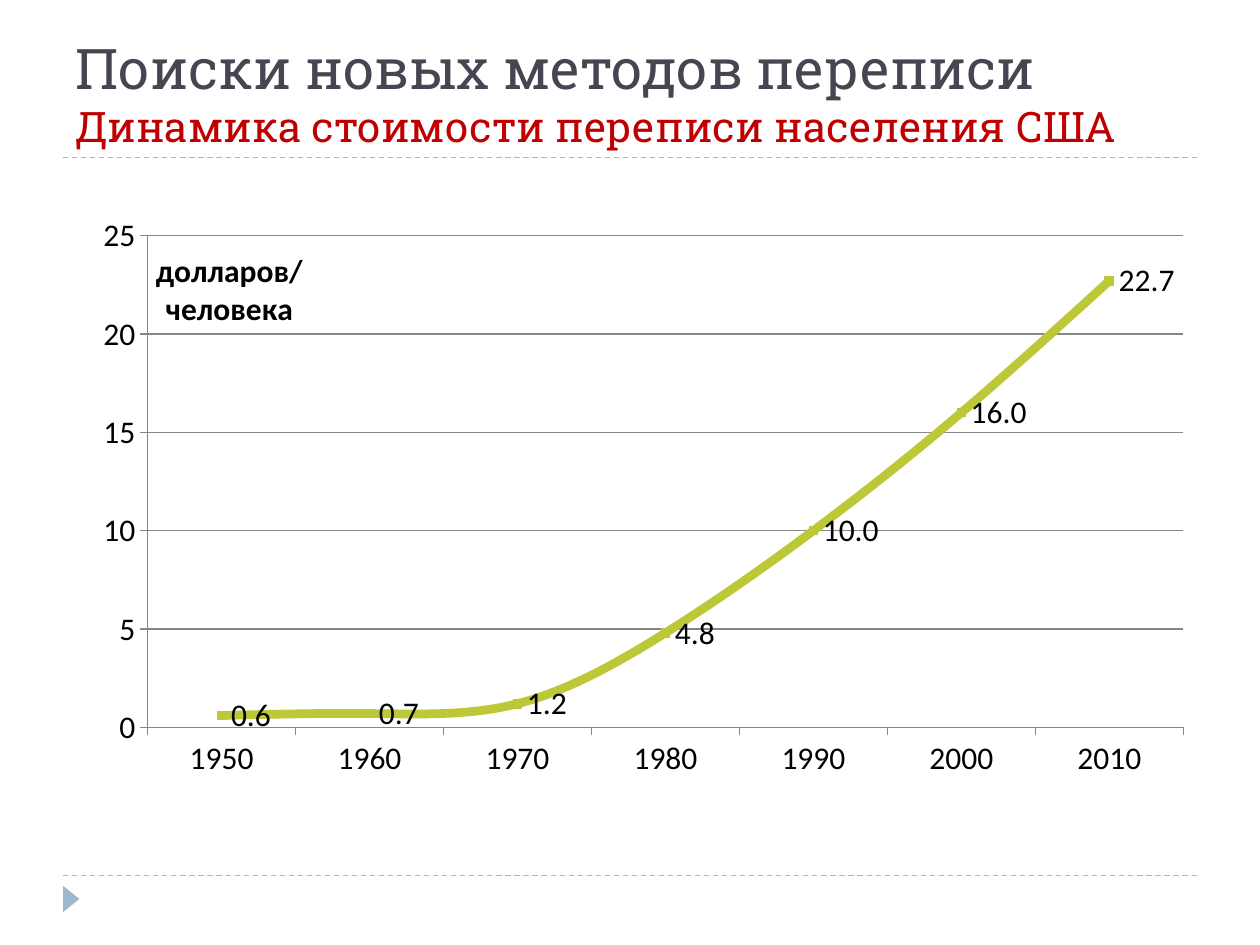
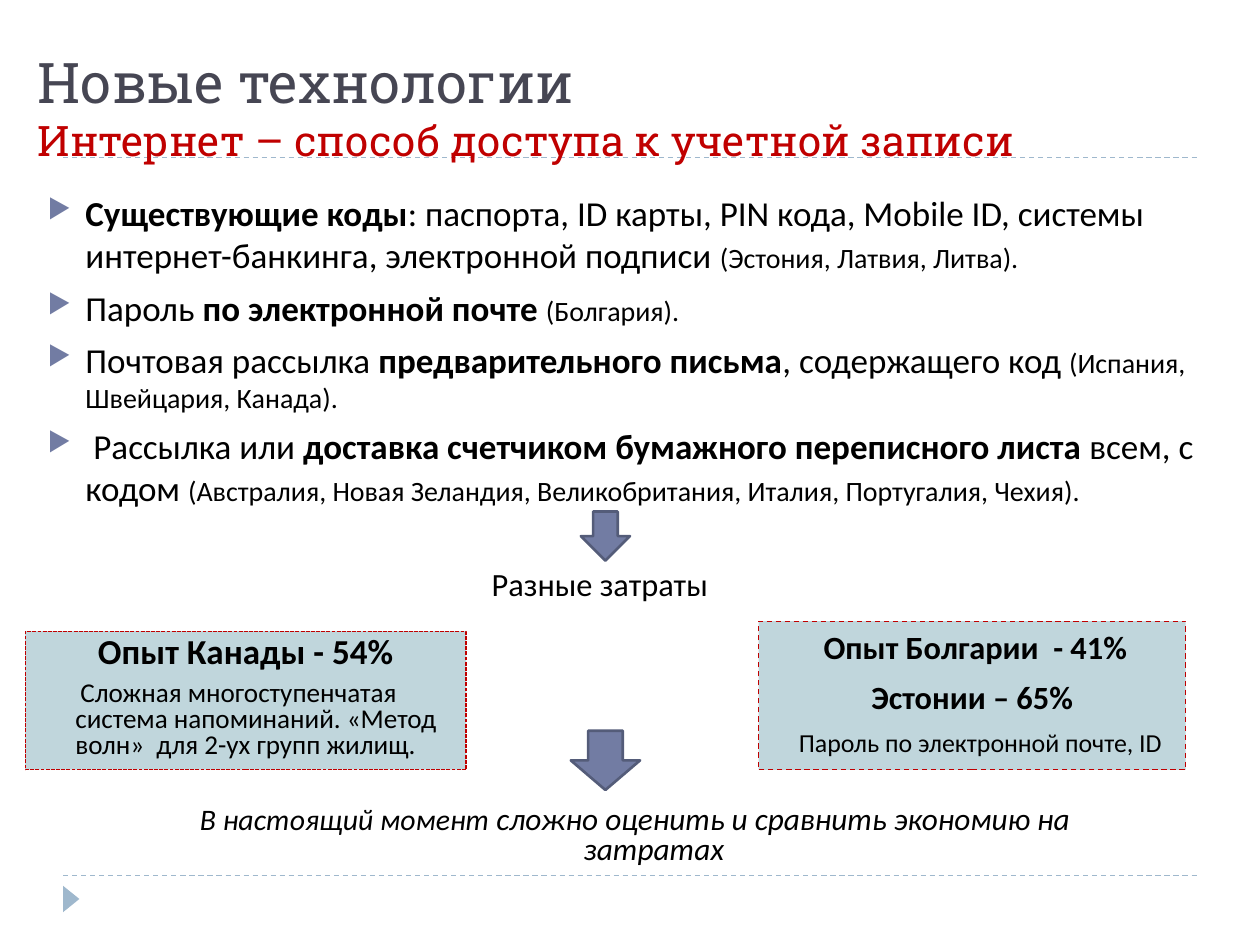
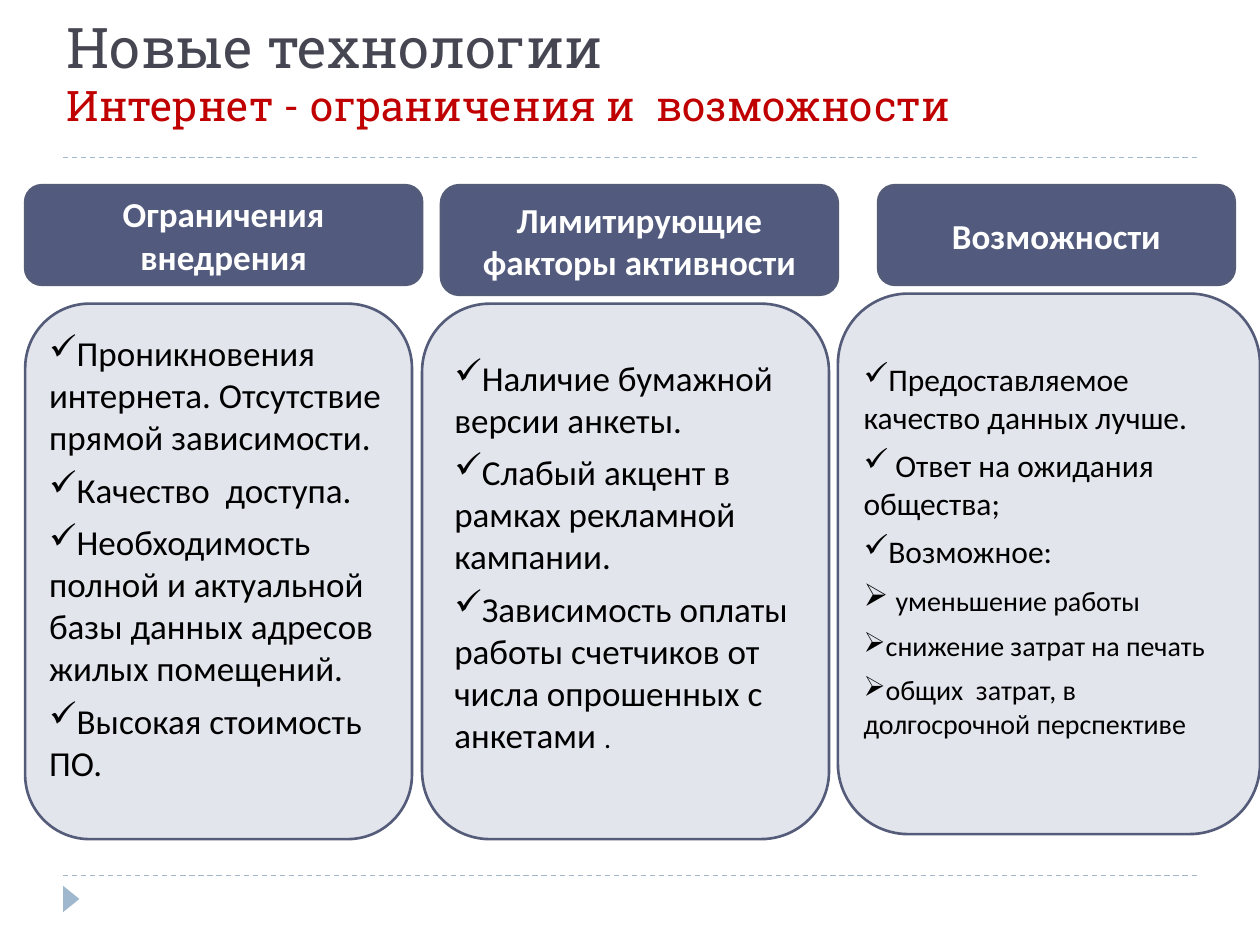
"""Builds three slides on new census methods: costs, internet access and its limits."""
from lxml import etree
from pptx import Presentation
from pptx.chart.data import CategoryChartData
from pptx.dml.color import RGBColor
from pptx.enum.chart import XL_CHART_TYPE, XL_LABEL_POSITION, XL_MARKER_STYLE
from pptx.enum.dml import MSO_LINE
from pptx.enum.shapes import MSO_CONNECTOR, MSO_SHAPE
from pptx.enum.text import MSO_ANCHOR, MSO_AUTO_SIZE, PP_ALIGN
from pptx.oxml import parse_xml
from pptx.oxml.ns import qn
from pptx.util import Inches, Pt

LEFT, CENTER = PP_ALIGN.LEFT, PP_ALIGN.CENTER
TOP, MIDDLE, BOTTOM = MSO_ANCHOR.TOP, MSO_ANCHOR.MIDDLE, MSO_ANCHOR.BOTTOM
RECTANGLE, ROUNDED = MSO_SHAPE.RECTANGLE, MSO_SHAPE.ROUNDED_RECTANGLE
ARROW, TRIANGLE = MSO_SHAPE.DOWN_ARROW, MSO_SHAPE.ISOSCELES_TRIANGLE
DASH, SHORT_DASH = MSO_LINE.DASH, MSO_LINE.SQUARE_DOT
BODY_FONT, TITLE_FONT = "Calibri", "Roboto Slab"
COLORS = {name: RGBColor.from_string(code) for name, code in {
    "title": "464653", "accent": "C00000", "rule": "9FB8CD", "text": "000000",
    "white": "FFFFFF", "arrow": "727CA3", "outline": "545C79", "header": "525B7E",
    "panel": "E3E5ED", "note": "C0D6DC", "curve": "BCC838", "grid": "868686",
}.items()}
WIDTH, HEIGHT = 10, 7.5
EDGE = WIDTH * 0.05
HANG = 0.3


def add_box(page, frame, kind=None, fill=None, line=None, weight=1.5, dash=None, anchor=TOP):
    """Add a text box, or a preset shape when a kind is given."""
    sides = [Inches(side) for side in frame]
    box = page.shapes.add_shape(kind, *sides) if kind else page.shapes.add_textbox(*sides)
    if kind:
        box.shadow.inherit = False
        box.fill.solid()
        box.fill.fore_color.rgb = COLORS[fill]
        if line:
            box.line.color.rgb = COLORS[line]
            box.line.width = Pt(weight)
            box.line.dash_style = dash
        else:
            box.line.fill.background()
    box.text_frame.word_wrap = True
    box.text_frame.vertical_anchor = anchor
    return box


def add_paragraph(box, spans, size, align=LEFT, color="text", bold=None, italic=None, bullet=None,
                  bullet_color=None, left=0, indent=0, before=6, after=0, spacing=None):
    """Write one paragraph of (text, size, bold) spans into a box."""
    frame = box.text_frame
    para = frame.paragraphs[0] if not frame.text else frame.add_paragraph()
    para.alignment = align
    para.space_before, para.space_after = Pt(before), Pt(after)
    if spacing:
        para.line_spacing = spacing
    properties = para._p.get_or_add_pPr()
    properties.set("marL", str(Inches(left)))
    properties.set("indent", str(Inches(indent)))
    if bullet_color:
        tint = etree.SubElement(properties, qn("a:buClr"))
        etree.SubElement(tint, qn("a:srgbClr"), val=str(COLORS[bullet_color]))
        etree.SubElement(properties, qn("a:buSzPct"), val="76000")
    if bullet:
        etree.SubElement(properties, qn("a:buChar"), char=bullet)
    para.font.name, para.font.size = BODY_FONT, Pt(size)
    para.font.bold, para.font.italic = bold, italic
    para.font.color.rgb = COLORS[color]
    for text, span_size, span_bold in [(spans, None, None)] if isinstance(spans, str) else spans:
        span = para.add_run()
        span.text = text
        span.font.bold = span_bold
        if span_size:
            span.font.size = Pt(span_size)


deck = Presentation()
deck.slide_width, deck.slide_height = Inches(WIDTH), Inches(HEIGHT)
layout = deck.slide_layouts[5]

titles = [
    ("Поиски новых методов переписи", "Динамика стоимости переписи населения США",
     (EDGE, 0.17, 9, 1.08)),
    ("Новые технологии", "Интернет – способ доступа к учетной записи", (0.2, 0, 9.45, 1.36)),
    ("Новые технологии", "Интернет - ограничения и  возможности", (0.43, 0, 9, 1.08)),
]
pages = []
for heading, subheading, frame in titles:
    page = deck.slides.add_slide(layout)
    pages.append(page)
    title = page.shapes.title
    title.left, title.top, title.width, title.height = [Inches(side) for side in frame]
    title.text_frame.auto_size = MSO_AUTO_SIZE.NONE
    title.text_frame.vertical_anchor = BOTTOM
    para = title.text_frame.paragraphs[0]
    para.alignment = LEFT
    para.font.name = TITLE_FONT
    for text, size, color in [(heading, 32, "title"), (subheading, 24, "accent")]:
        if para.runs:
            para.add_line_break()
        span = para.add_run()
        span.text = text
        span.font.size = Pt(size)
        span.font.color.rgb = COLORS[color]
cost_page, access_page, limits_page = pages

decor = [add_box(cost_page, (0.46, 7.07, 0.21, 0.13), TRIANGLE, "rule")]
decor[0].rotation = 90
for level in (1.25, 6.95):
    rule = cost_page.shapes.add_connector(MSO_CONNECTOR.STRAIGHT, Inches(EDGE), Inches(level),
                                          Inches(WIDTH - EDGE), Inches(level))
    rule.line.color.rgb = COLORS["rule"]
    rule.line.width = Pt(0.75)
    rule.line.dash_style = DASH
    etree.SubElement(rule.element.spPr, qn("a:effectLst"))
    decor.append(rule)
for number, part in enumerate(decor, 20):
    part.element.xpath(".//p:cNvPr")[0].set("id", str(number))
    layout.shapes.element.append(part.element)

costs = {"1950": 0.6, "1960": 0.7, "1970": 1.2, "1980": 4.8, "1990": 10, "2000": 16, "2010": 22.7}
data = CategoryChartData()
data.categories = list(costs)
data.add_series("Series 1", list(costs.values()))
chart = cost_page.shapes.add_chart(XL_CHART_TYPE.LINE_MARKERS, Inches(0.59), Inches(1.62),
                                   Inches(8.82), Inches(4.72), data).chart
chart.has_legend = chart.has_title = False
chart.font.name, chart.font.size = BODY_FONT, Pt(18)
chart.font.color.rgb = COLORS["text"]

values = chart.value_axis
values.minimum_scale, values.maximum_scale, values.major_unit = 0, 25, 5
values.tick_labels.number_format = "0"
values.tick_labels.number_format_is_linked = False
for line in (values.format.line, values.major_gridlines.format.line,
             chart.category_axis.format.line):
    line.color.rgb = COLORS["grid"]
    line.width = Pt(0.75)

caption = values.axis_title.text_frame
caption.text = "долларов/\nчеловека"
caption._txBody.bodyPr.set("rot", "0")
caption._txBody.bodyPr.set("vert", "horz")
for para in caption.paragraphs:
    para.font.name, para.font.size, para.font.bold = BODY_FONT, Pt(18), True

plot_area = chart.element.find(".//" + qn("c:plotArea"))
axis_title = values.axis_title._element
for owner, place in [(plot_area, {"x": 0.066, "y": 0.053, "w": 0.932, "h": 0.827}),
                     (axis_title, {"x": 0.07, "y": 0.07})]:
    for old in owner.findall(qn("c:layout")):
        owner.remove(old)
    target = '<c:layoutTarget val="inner"/>' if owner is plot_area else ""
    modes = "".join(f'<c:{key}Mode val="edge"/>' for key in "xy")
    sizes = "".join(f'<c:{key} val="{share}"/>' for key, share in place.items())
    manual = parse_xml(
        '<c:layout xmlns:c="http://schemas.openxmlformats.org/drawingml/2006/chart">'
        f"<c:manualLayout>{target}{modes}{sizes}</c:manualLayout></c:layout>")
    owner.insert(0 if owner is plot_area else 1, manual)
overlay = axis_title.find(qn("c:overlay"))
if overlay is not None:
    overlay.set("val", "1")

curve = chart.plots[0].series[0]
curve.smooth = True
curve.format.line.color.rgb = COLORS["curve"]
curve.format.line.width = Pt(5)
curve.marker.style, curve.marker.size = XL_MARKER_STYLE.SQUARE, 5
curve.marker.format.fill.solid()
curve.marker.format.fill.fore_color.rgb = COLORS["curve"]
curve.marker.format.line.color.rgb = COLORS["curve"]
labels = curve.data_labels
labels.show_value = True
labels.number_format, labels.number_format_is_linked = "#,##0.0", False
labels.position = XL_LABEL_POSITION.RIGHT

access_ways = [
    [("Существующие коды", None, True),
     (": паспорта, ID карты, PIN кода, Mobile ID, системы интернет-банкинга, "
      "электронной подписи ", None, None), ("(Эстония, Латвия, Литва).", 16, None)],
    [("Пароль ", None, None), ("по электронной почте ", None, True), ("(Болгария).", 16, None)],
    [("Почтовая рассылка ", None, None), ("предварительного письма", None, True),
     (", содержащего код ", None, None), ("(Испания, Швейцария, Канада).", 16, None)],
    [(" Рассылка или ", None, None),
     ("доставка счетчиком бумажного переписного листа ", None, True),
     ("всем, с кодом ", None, None),
     ("(Австралия, Новая Зеландия, Великобритания, Италия, Португалия, Чехия).", 16, None)],
]
ways_box = add_box(access_page, (0.28, 1.47, 9.45, 2.68))
for spans in access_ways:
    add_paragraph(ways_box, spans, 20, bullet="▶", bullet_color="arrow", left=HANG, indent=-HANG)

for frame in [(4.61, 4.06, 0.39, 0.39), (4.53, 5.8, 0.55, 0.47)]:
    add_box(access_page, frame, ARROW, "arrow", "outline")

spending = add_box(access_page, (2.4, 4.46, 4.72, 0.39))
add_paragraph(spending, "Разные затраты", 18.5, CENTER, spacing=0.9)

canada = add_box(access_page, (0.2, 5.01, 3.5, 1.1), RECTANGLE, "note", "accent", 0.75, SHORT_DASH)
add_paragraph(canada, "Опыт Канады - 54%", 20, CENTER, bold=True, spacing=0.8)
add_paragraph(canada, "Сложная многоступенчатая система напоминаний. «Метод волн»  для 2-ух "
              "групп жилищ.", 15.5, left=HANG, indent=0.04, spacing=0.8)

bulgaria = add_box(access_page, (6.02, 4.93, 3.39, 1.18), RECTANGLE, "note", "accent", 0.75, DASH)
for text, size, bold, shift in [("Опыт Болгарии  - 41%", 18.5, True, 0.05),
                                ("Эстонии – 65%", 18.5, True, 0),
                                ("Пароль по электронной почте, ID", 14.8, None, 0.13)]:
    add_paragraph(bulgaria, text, size, CENTER, bold=bold, left=shift)

summary = add_box(access_page, (1.38, 6.35, 7.32, 0.6))
add_paragraph(summary, [("В настоящий момент ", 17, None),
                        ("сложно оценить и сравнить экономию на затратах", None, None)],
              17.9, CENTER, italic=True, left=HANG, indent=-HANG, spacing=0.8)

CHECK, POINTER = "✓", "➢"
columns = [
    ("Ограничения внедрения", (0.2, 1.47, 3.15, 0.79), (0.2, 2.41, 3.07, 4.25), 0.04, 0.26, [
        (CHECK, "Проникновения интернета. Отсутствие прямой зависимости.", 20),
        (CHECK, "Качество  доступа.", 20),
        (CHECK, "Необходимость полной и актуальной базы данных адресов жилых помещений.", 20),
        (CHECK, "Высокая стоимость ПО.", 20)]),
    ("Возможности", (6.97, 1.47, 2.83, 0.79), (6.65, 2.33, 3.35, 4.29), 0.04, 0.26, [
        (CHECK, "Предоставляемое качество данных лучше.", 18),
        (CHECK, " Ответ на ожидания общества;", 18),
        (CHECK, "Возможное:", 18),
        (POINTER, [(" ", 18, None), ("уменьшение работы", None, None)], 16),
        (POINTER, "снижение затрат на печать", 16),
        (POINTER, "общих  затрат, в долгосрочной перспективе", 16)]),
    ("Лимитирующие факторы активности", (3.5, 1.47, 3.15, 0.87), (3.35, 2.41, 3.23, 4.25),
     0.1, 0.29, [
        (CHECK, "Наличие бумажной версии анкеты.", 20),
        (CHECK, "Слабый акцент в рамках рекламной кампании.", 20),
        (CHECK, [("Зависимость оплаты работы счетчиков от числа опрошенных с анкетами ",
                  None, None), (".", 16, None)], 20)]),
]
for heading, header_frame, panel_frame, side, base, points in columns:
    panel = add_box(limits_page, panel_frame, ROUNDED, "panel", "outline", anchor=MIDDLE)
    panel.text_frame.margin_left = panel.text_frame.margin_right = Inches(side)
    panel.text_frame.margin_top, panel.text_frame.margin_bottom = Inches(0.04), Inches(base)
    for bullet, spans, size in points:
        add_paragraph(panel, spans, size, bullet=bullet, before=3, after=3)
    header = add_box(limits_page, header_frame, ROUNDED, "header", "outline", anchor=MIDDLE)
    add_paragraph(header, heading, 20, CENTER, "white", bold=True, before=0)

deck.save("out.pptx")
